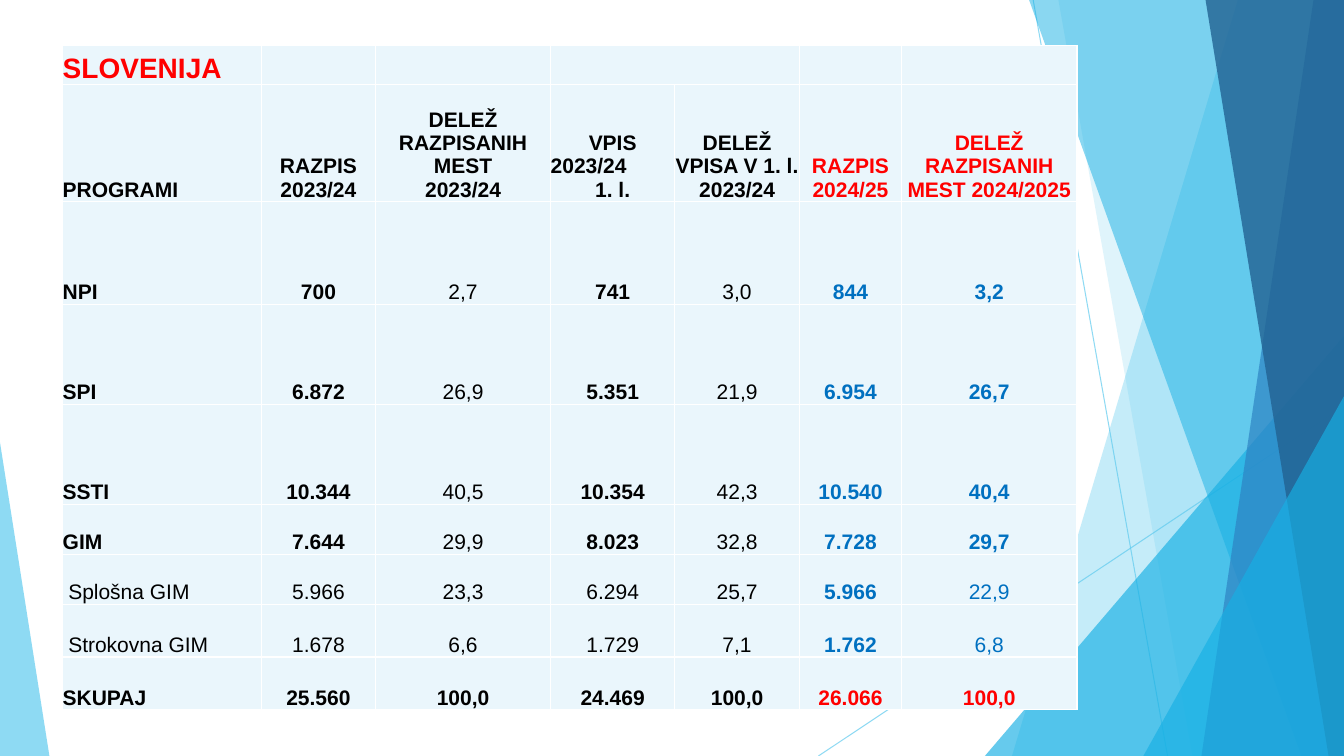
import pptx
import pptx.util
import pptx.dml.color
import pptx.enum.shapes
import pptx.enum.text
import pptx.oxml
import pptx.oxml.ns
from pptx.util import Pt

COLORS = {
    "sky": "5FCBEF", "azure": "17B0E4", "blue": "2E83C3", "navy": "226292",
    "cell": "EAF6FC", "border": "FFFFFF", "text": "000000",
    "heading": "FF0000", "new_year": "0070C0",
}

# Row kind, then one text per column; a list holds separate paragraphs
ROWS = [
    ("title", ["SLOVENIJA", "", "", "", "", "", ""]),
    ("header", ["PROGRAMI", "RAZPIS 2023/24",
                ["DELEŽ RAZPISANIH MEST", "2023/24"],
                ["VPIS", "2023/24", "1. l."], "DELEŽ VPISA V 1. l. 2023/24",
                "RAZPIS 2024/25", "DELEŽ RAZPISANIH MEST 2024/2025"]),
    ("main", ["NPI", "700", "2,7", "741", "3,0", "844", "3,2"]),
    ("main", ["SPI", "6.872", "26,9", "5.351", "21,9", "6.954", "26,7"]),
    ("main", ["SSTI", "10.344", "40,5", "10.354", "42,3", "10.540", "40,4"]),
    ("main", ["GIM", "7.644", "29,9", "8.023", "32,8", "7.728", "29,7"]),
    ("sub", ["Splošna GIM", "5.966", "23,3", "6.294", "25,7", "5.966", "22,9"]),
    ("sub", ["Strokovna GIM", "1.678", "6,6", "1.729", "7,1", "1.762", "6,8"]),
    ("total", ["SKUPAJ", "25.560", "100,0", "24.469", "100,0", "26.066", "100,0"]),
]
COLUMN_WIDTHS = [142, 81.4, 125.2, 88.6, 89.2, 72.8, 125.4]
ROW_HEIGHTS = [28, 83.6, 73.4, 71.4, 71.4, 35.8, 35.8, 37.6, 37.6]
OLD_SHARES, NEW_YEAR = (2, 4), (5, 6)

# Panels reach the right edge: top-left x, bottom-left x, colour, opacity
BACK_PANELS = [(884.2, 722.9, "sky", 36), (756, 851.8, "sky", 20)]
FRONT_PANELS = [(735.1, 929.5, "azure", 50), (938.2, 858.2, "blue", 70),
                (861.1, 949, "navy", 80)]


def rgb(name):
    return pptx.dml.color.RGBColor.from_string(COLORS[name])


def paint(fill, color, opacity):
    fill.solid()
    fill.fore_color.rgb = rgb(color)


def set_opacity(shape, opacity):
    color = shape._element.spPr.find(".//" + pptx.oxml.ns.qn("a:srgbClr"))
    color.append(pptx.oxml.parse_xml(
        f'<a:alpha {pptx.oxml.ns.nsdecls("a")} val="{opacity * 1000}"/>'))


def finish_facet(shape, color, opacity):
    shape.shadow.inherit = False
    shape.fill.solid()
    shape.fill.fore_color.rgb = rgb(color)
    set_opacity(shape, opacity)
    shape.line.fill.background()


def add_ray(slide, x1, y1, x2, y2):
    ray = slide.shapes.add_connector(
        pptx.enum.shapes.MSO_CONNECTOR.STRAIGHT, Pt(x1), Pt(y1), Pt(x2), Pt(y2))
    ray.line.color.rgb = rgb("sky")
    ray.line.width = Pt(0.75)
    set_opacity(ray, 70)
    ray._element.spPr.append(pptx.oxml.parse_xml(
        f'<a:effectLst {pptx.oxml.ns.nsdecls("a")}/>'))


def add_panels(slide, panels, left, top, right, bottom):
    for top_x, bottom_x, color, opacity in panels:
        builder = slide.shapes.build_freeform(Pt(left + top_x), Pt(top))
        builder.add_line_segments([(Pt(right), Pt(top)), (Pt(right), Pt(bottom)),
                                   (Pt(left + bottom_x), Pt(bottom))], close=True)
        finish_facet(builder.convert_to_shape(), color, opacity)


def add_corner(slide, left, bottom, width, height, apex, color, opacity):
    corner = slide.shapes.add_shape(
        pptx.enum.shapes.MSO_SHAPE.ISOSCELES_TRIANGLE,
        Pt(left), Pt(bottom - height), Pt(width), Pt(height))
    corner.adjustments[0] = apex
    finish_facet(corner, color, opacity)


def add_facets(slide, left, top, width, height):
    right, bottom = left + width, top + height
    # Thin rays
    add_ray(slide, left + 738, top, left + 834, bottom)
    add_ray(slide, right, top + 290, left + 584.6, bottom)
    # Overlapping panels and corner triangles, back to front
    add_panels(slide, BACK_PANELS, left, top, right, bottom)
    add_corner(slide, right - 256.5, bottom, 256.5, 300.2, 1, "azure", 66)
    add_panels(slide, FRONT_PANELS, left, top, right, bottom)
    add_corner(slide, right - 143.3, bottom, 143.3, 257, 1, "azure", 66)
    add_corner(slide, left, bottom, 35.3, 223.9, 0, "sky", 70)


def style_cell(cell):
    properties = cell._tc.get_or_add_tcPr()
    for side in ("lnL", "lnR", "lnT", "lnB"):
        properties.append(pptx.oxml.parse_xml(
            f'<a:{side} {pptx.oxml.ns.nsdecls("a")} w="12700"><a:solidFill>'
            f'<a:srgbClr val="{COLORS["border"]}"/></a:solidFill></a:{side}>'))
    cell.fill.solid()
    cell.fill.fore_color.rgb = rgb("cell")
    cell.margin_left = cell.margin_right = cell.margin_top = cell.margin_bottom = 0
    cell.vertical_anchor = pptx.enum.text.MSO_ANCHOR.BOTTOM


def text_color(kind, column):
    if kind == "title":
        return "heading"
    if column not in NEW_YEAR:
        return "text"
    return "heading" if kind in ("header", "total") else "new_year"


def is_bold(kind, column):
    if kind == "main":
        return column not in OLD_SHARES
    return kind != "sub" or column == NEW_YEAR[0]


def write_cell(cell, kind, column, content):
    lines = content if isinstance(content, list) else [content]
    cell.text = "\n".join(lines)
    if kind == "sub" and column == 0:
        cell.margin_left = Pt(4)
    for paragraph in cell.text_frame.paragraphs:
        if column:
            paragraph.alignment = pptx.enum.text.PP_ALIGN.CENTER
        paragraph.font.name = "Arial"
        paragraph.font.size = Pt(20 if kind == "title" else 15)
        paragraph.font.bold = is_bold(kind, column)
        paragraph.font.color.rgb = rgb(text_color(kind, column))


def add_enrolment_table(slide, left, top):
    enrolment = slide.shapes.add_table(
        len(ROWS), len(COLUMN_WIDTHS), Pt(left), Pt(top),
        Pt(sum(COLUMN_WIDTHS)), Pt(sum(ROW_HEIGHTS))).table
    enrolment.first_row = enrolment.horz_banding = False
    for column, width in zip(enrolment.columns, COLUMN_WIDTHS):
        column.width = Pt(width)
    for row, height in zip(enrolment.rows, ROW_HEIGHTS):
        row.height = Pt(height)
    for r, (kind, contents) in enumerate(ROWS):
        for c, content in enumerate(contents):
            cell = enrolment.cell(r, c)
            style_cell(cell)
            write_cell(cell, kind, c, content)
    enrolment.cell(0, 3).merge(enrolment.cell(0, 4))
    # The year of the enrolment column stands at its left edge
    enrolment_year = enrolment.cell(1, 3).text_frame.paragraphs[1]
    enrolment_year.alignment = pptx.enum.text.PP_ALIGN.LEFT


def main():
    presentation = pptx.Presentation()
    presentation.slide_width, presentation.slide_height = Pt(960), Pt(540)
    slide = presentation.slides.add_slide(presentation.slide_layouts[6])
    add_facets(slide, 0, 0, 960, 540)
    add_enrolment_table(slide, 44.8, 32.4)
    presentation.save("out.pptx")


if __name__ == "__main__":
    main()
